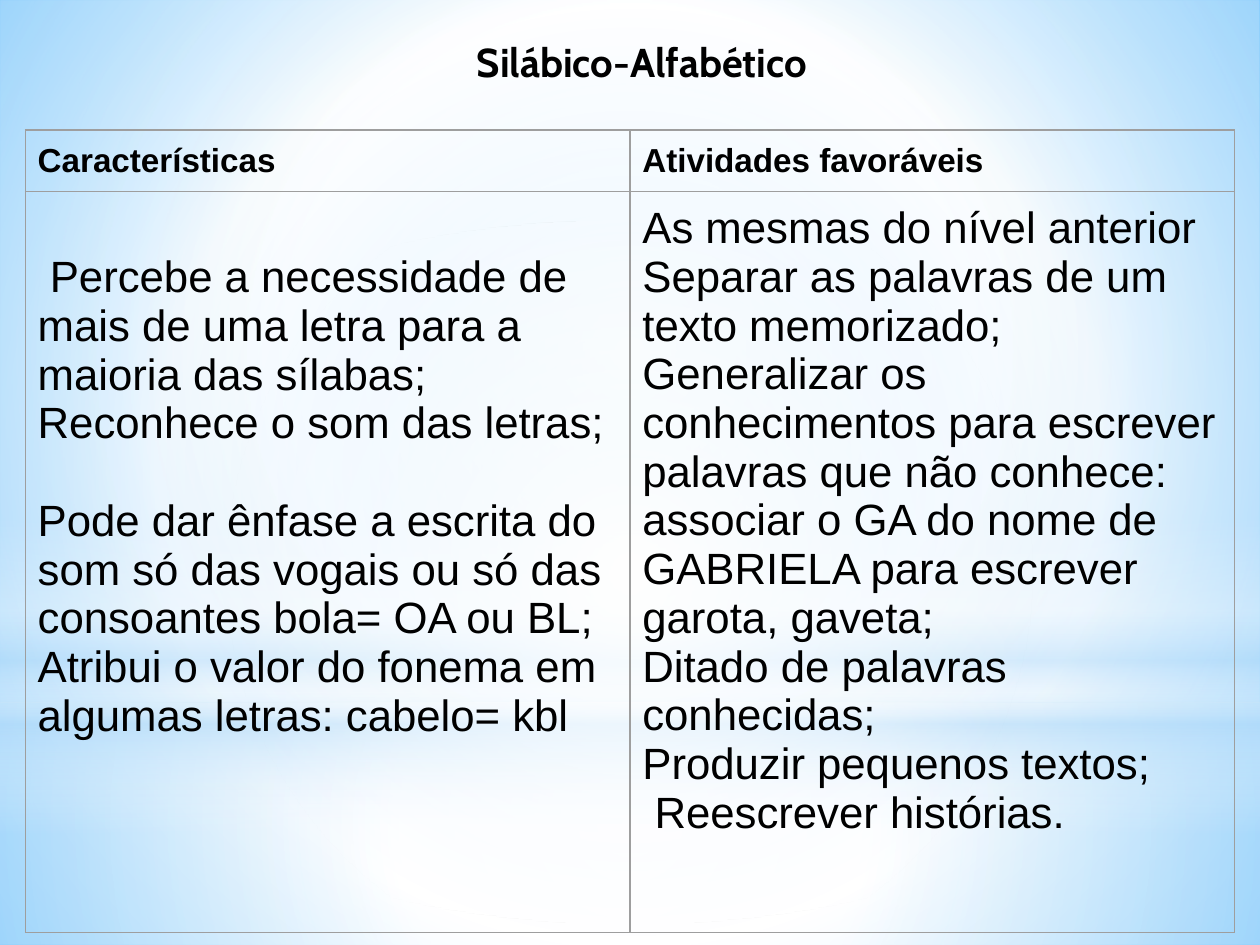
from dataclasses import dataclass

from lxml import etree
from pptx import Presentation
from pptx import util as u
from pptx.dml.color import RGBColor
from pptx.enum import shapes, text
from pptx.oxml import ns

Cm, Pt = u.Cm, u.Pt


@dataclass(frozen=True)
class Theme:
    ink: str = "000000"
    border: str = "9E9E9E"
    white: str = "FFFFFF"
    haze: str = "B4DCFA"
    sky: str = "99D4FE"
    deep_sky: str = "54BDFF"
    title_font: str = "Cabin"
    body_font: str = "Arial"
    title_size: float = 23
    head_size: float = 19
    body_size: float = 25
    border_width: float = 0.75


T = Theme()
BLANK_LINE = Pt(28)
INSET = Cm(0.25)


def sub(parent, tag, **attrs):
    return etree.SubElement(parent, ns.qn(tag), {k: str(v) for k, v in attrs.items()})


def set_gradient(fill, stops, angle=None):
    """Stops are (position %, colour, opacity %); without an angle it is radial."""
    fill.gradient()
    grad = fill._fill._gradFill
    for child in list(grad):
        grad.remove(child)
    gs_list = sub(grad, "a:gsLst")
    for pos, color, opacity in stops:
        clr = sub(sub(gs_list, "a:gs", pos=pos * 1000), "a:srgbClr", val=color)
        if opacity < 100:
            sub(clr, "a:alpha", val=opacity * 1000)
    if angle is None:
        center = sub(grad, "a:path", path="circle")
        sub(center, "a:fillToRect", l=50000, t=50000, r=50000, b=50000)
    else:
        sub(grad, "a:lin", ang=angle * 60000, scaled=0)


def add_glow(s, kind, top, height, stops, angle=None):
    sp = s.shapes.add_shape(kind, 0, Cm(top), Cm(25.4), Cm(height))
    sp.shadow.inherit = False
    sp.line.fill.background()
    set_gradient(sp.fill, stops, angle)


def add_background(s):
    set_gradient(s.background.fill,
                 [(0, T.sky, 100), (60, T.white, 100), (100, T.deep_sky, 100)])
    rect, oval = shapes.MSO_SHAPE.RECTANGLE, shapes.MSO_SHAPE.OVAL
    add_glow(s, rect, 14.17, 4.88,
             [(0, T.white, 89), (37, T.white, 74), (100, T.haze, 77)])
    add_glow(s, rect, 0, 14.17,
             [(0, T.white, 87), (48, T.white, 60), (100, T.haze, 77)])
    add_glow(s, rect, 10.46, 6.35,
             [(0, T.white, 0), (29, T.white, 28), (45, T.haze, 40),
              (55, T.white, 24), (65, T.haze, 60), (100, T.white, 0)], angle=90)
    add_glow(s, oval, 4.45, 14.17,
             [(0, T.white, 100), (56, T.white, 0), (100, T.white, 0)])


def add_run(p, words, font, size, bold=False):
    r = p.add_run()
    r.text = words
    r.font.name, r.font.size, r.font.bold = font, Pt(size), bold
    r.font.color.rgb = RGBColor.from_string(T.ink)


def set_borders(cell):
    props = cell._tc.get_or_add_tcPr()
    for i, side in enumerate(("a:lnL", "a:lnR", "a:lnT", "a:lnB")):
        ln = etree.Element(ns.qn(side), {"w": str(int(Pt(T.border_width)))})
        sub(sub(ln, "a:solidFill"), "a:srgbClr", val=T.border)
        props.insert(i, ln)


def fill_cell(cell, paragraphs, size, bold=False, top=INSET):
    """Paragraphs are (words, space before)."""
    cell.fill.background()
    set_borders(cell)
    cell.margin_left = cell.margin_right = cell.margin_bottom = INSET
    cell.margin_top = top
    tf = cell.text_frame
    for i, (words, gap) in enumerate(paragraphs):
        p = tf.add_paragraph() if i else tf.paragraphs[0]
        p.space_before = gap
        add_run(p, words, T.body_font, size, bold)


def add_levels_table(s):
    table = s.shapes.add_table(2, 2, Cm(0.51), Cm(2.62), Cm(24.38), Cm(16.17)).table
    table.first_row = table.horz_banding = False
    table.rows[0].height, table.rows[1].height = Cm(1.24), Cm(14.93)

    # Header row
    for col, head in enumerate(("Características", "Atividades favoráveis")):
        fill_cell(table.cell(0, col), [(head, 0)], T.head_size, bold=True)

    # Content row
    traits = [
        (" Percebe a necessidade de mais de uma letra para a maioria das sílabas;", 0),
        ("Reconhece o som das letras;", 0),
        ("Pode dar ênfase a escrita do som só das vogais ou só das consoantes "
         "bola= OA ou BL;", BLANK_LINE),
        ("Atribui o valor do fonema em algumas letras: cabelo= kbl", 0),
    ]
    activities = [
        ("As mesmas do nível anterior", 0),
        ("Separar as palavras de um texto memorizado; Generalizar os conhecimentos "
         "para escrever palavras que não conhece: associar o GA do nome de GABRIELA "
         "para escrever garota, gaveta;", 0),
        ("Ditado de palavras conhecidas;", 0),
        ("Produzir pequenos textos;", 0),
        (" Reescrever histórias.", 0),
    ]
    fill_cell(table.cell(1, 0), traits, T.body_size, top=INSET + BLANK_LINE)
    fill_cell(table.cell(1, 1), activities, T.body_size)


def format_title(s, words):
    sp = s.shapes.title
    sp.left, sp.top, sp.width, sp.height = Cm(2.9), Cm(0.51), Cm(20.37), Cm(1.5)
    tf = sp.text_frame
    tf.word_wrap = True
    tf.auto_size = text.MSO_AUTO_SIZE.NONE
    tf.vertical_anchor = text.MSO_ANCHOR.TOP
    tf.margin_left = tf.margin_top = tf.margin_bottom = INSET
    tf.margin_right = Cm(0.53)
    p = tf.paragraphs[0]
    p.alignment = text.PP_ALIGN.CENTER
    p.space_before = 0
    add_run(p, words, T.title_font, T.title_size, bold=True)
    # Bring the title in front of the background glows
    s.shapes._spTree.append(sp._element)


def main():
    prs = Presentation()
    prs.slide_width, prs.slide_height = Cm(25.4), Cm(19.05)
    s = prs.slides.add_slide(prs.slide_layouts[5])
    add_background(s)
    add_levels_table(s)
    format_title(s, "Silábico-Alfabético")
    prs.save("out.pptx")


if __name__ == "__main__":
    main()
